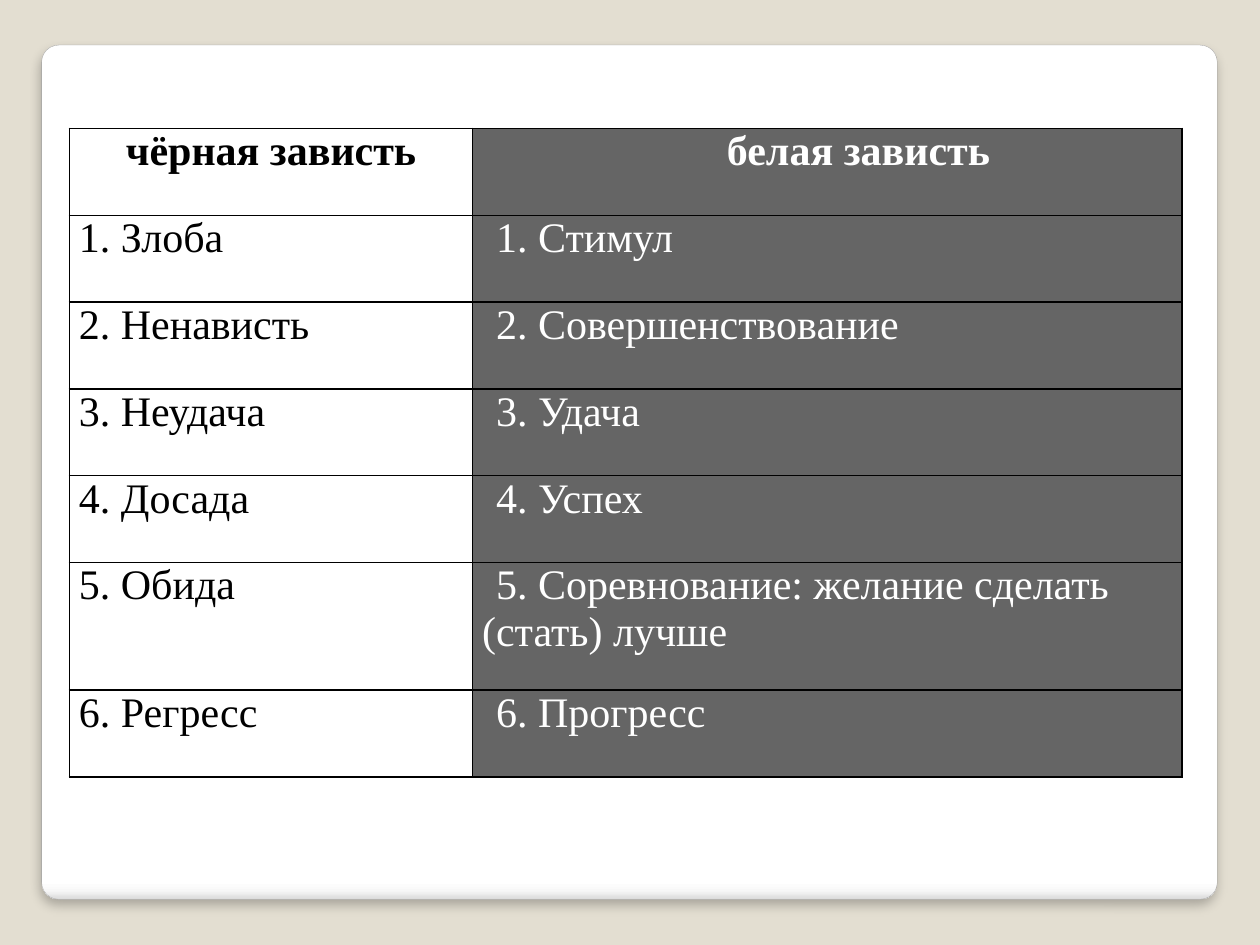
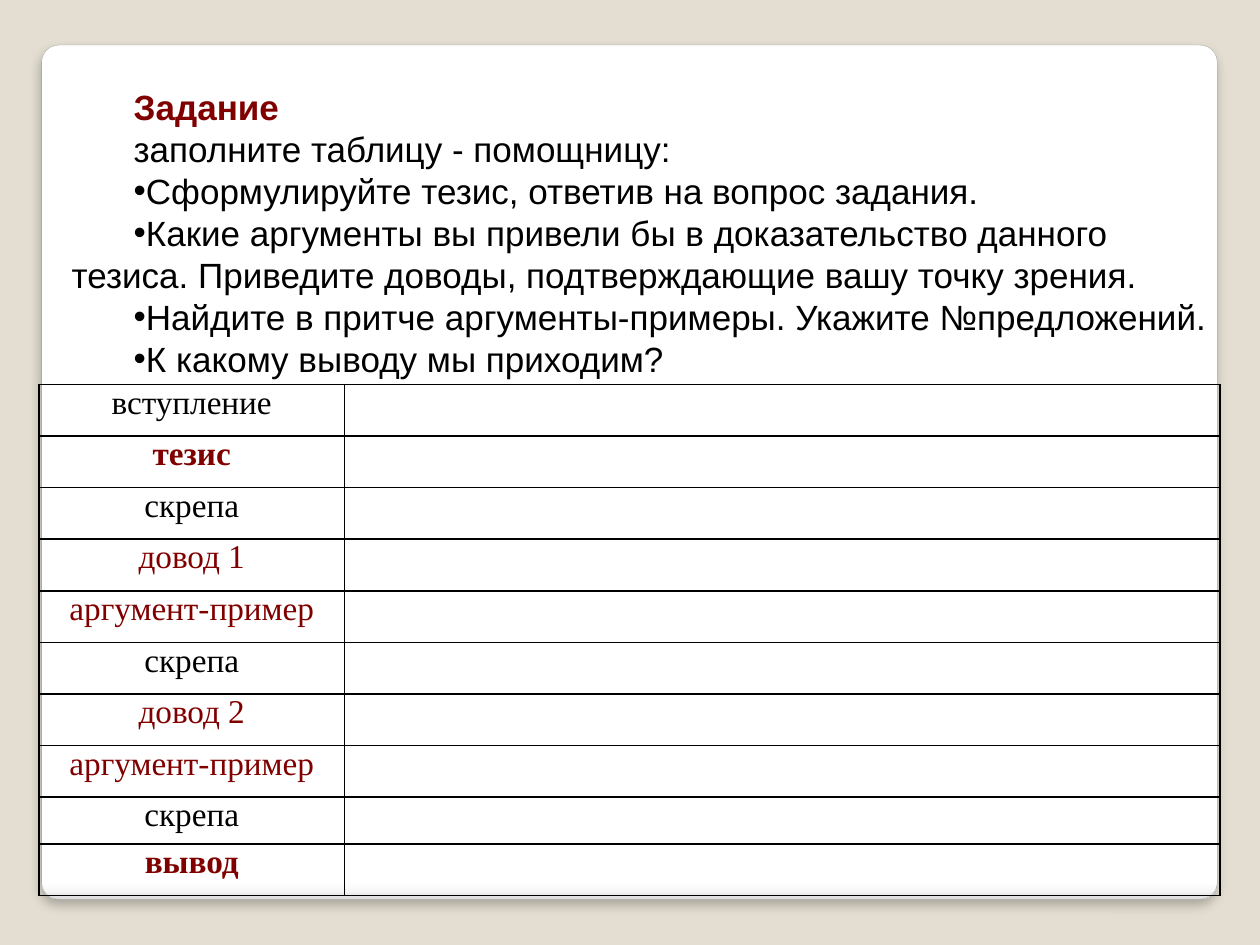
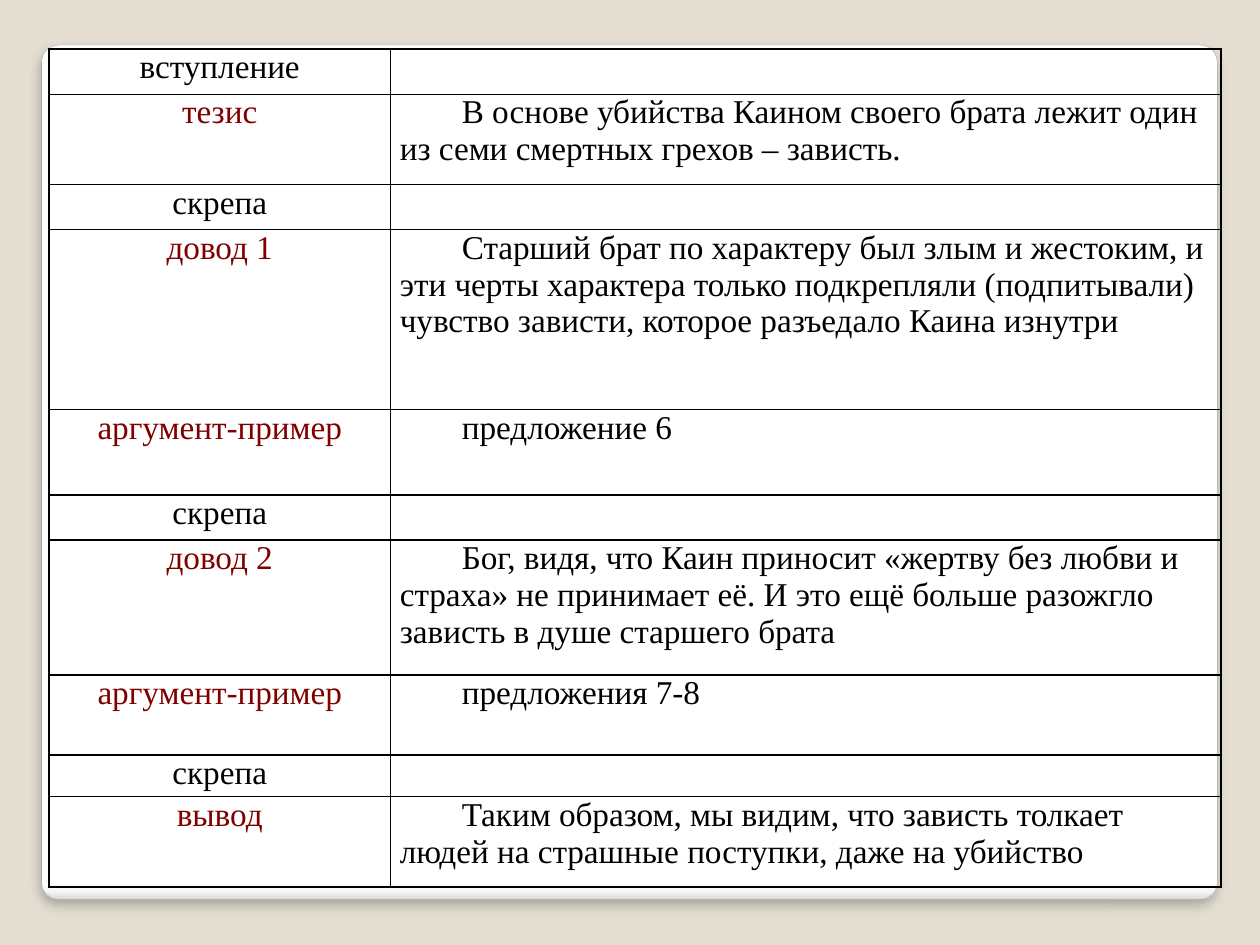
from pptx import Presentation
from pptx.dml.color import RGBColor
from pptx.enum import shapes, text
from pptx.oxml import parse_xml
from pptx.oxml.ns import nsdecls
from pptx.util import Cm, Pt

BEIGE = RGBColor(0xE3, 0xDE, 0xD1)
EDGE = RGBColor(0xA4, 0xA4, 0xA4)
GREY = RGBColor(0x65, 0x65, 0x65)
BLACK = RGBColor(0, 0, 0)
WHITE = RGBColor(0xFF, 0xFF, 0xFF)
MAROON = RGBColor(0x80, 0, 0)
PANEL_STOPS = [(0, "FFFFFF"), (98, "FFFFFF"), (99, "F7F7F7"), (100, "DADADA")]

CENTER = text.PP_ALIGN.CENTER
SERIF = "Times New Roman"
INDENT = 1.25
STAGES = ["вступление", "тезис", "скрепа", "довод 1", "аргумент-пример",
          "скрепа", "довод 2", "аргумент-пример", "скрепа", "вывод"]
PLAIN_STAGES = {"вступление", "скрепа"}


def set_all(obj, values):
    for name, value in values.items():
        setattr(obj, name, value)


def xml(tag, inner="", attrs=""):
    return parse_xml(f"<a:{tag} {nsdecls('a')} {attrs}>{inner}</a:{tag}>")


def solid(color):
    return f'<a:solidFill><a:srgbClr val="{color}"/></a:solidFill>'


class Deck:
    """Holds the shared style and the current slide."""

    def __init__(self):
        self.prs = Presentation()
        set_all(self.prs, {"slide_width": Cm(25.4), "slide_height": Cm(19.05)})
        self.s = None
        fill = self.prs.slide_master.background.fill
        fill.solid()
        fill.fore_color.rgb = BEIGE

    def slide(self, layout=6):
        self.s = self.prs.slides.add_slide(self.prs.slide_layouts[layout])

    def master_panel(self):
        """Draw the rounded panel and move it to the master for every slide."""
        sp = self.s.shapes.add_shape(shapes.MSO_SHAPE.ROUNDED_RECTANGLE,
                                     Cm(0.84), Cm(0.91), Cm(23.7), Cm(17.22))
        sp.adjustments[0] = 0.02
        sp.line.color.rgb = EDGE
        sp.line.width = Pt(0.16)
        stops = "".join(f'<a:gs pos="{pos * 1000}"><a:srgbClr val="{c}"/></a:gs>'
                        for pos, c in PANEL_STOPS)
        grad = xml("gradFill", f'<a:gsLst>{stops}</a:gsLst><a:lin ang="5400000" scaled="0"/>',
                   'rotWithShape="1"')
        spPr = sp._element.spPr
        spPr.insert(2, grad)
        spPr.append(xml("effectLst",
                        f'<a:outerShdw blurRad="{Pt(6)}" dist="{Pt(4)}" dir="5400000" '
                        'algn="t" rotWithShape="0"><a:srgbClr val="000000">'
                        '<a:alpha val="25000"/></a:srgbClr></a:outerShdw>'))
        self.prs.slide_master.shapes._spTree.insert(2, sp._element)

    def paragraph(self, p, words, indent=0, align=None, bullet=None, **font):
        r = p.add_run()
        r.text = words
        color = font.pop("color", BLACK)
        set_all(r.font, font)
        r.font.color.rgb = color
        p.alignment = align
        pPr = p._p.get_or_add_pPr()
        pPr.set("marL", "0")
        pPr.set("indent", str(Cm(indent)))
        pPr.append(xml("buChar", attrs=f'char="{bullet}"') if bullet else xml("buNone"))

    def table(self, left, top, cols, rows, cells):
        """cells holds, row by row, dicts of paragraph values plus an optional fill."""
        tbl = self.s.shapes.add_table(len(rows), len(cols), Cm(left), Cm(top),
                                      Cm(sum(cols)), Cm(sum(rows))).table
        set_all(tbl, {"first_row": False, "horz_banding": False})
        for col, width in zip(tbl.columns, cols):
            col.width = Cm(width)
        for row, height, values in zip(tbl.rows, rows, cells):
            row.height = Cm(height)
            for cell, value in zip(row.cells, values):
                self.cell(cell, **value)

    def cell(self, cell, words="", fill=None, **style):
        set_all(cell, {"margin_left": Cm(0.19), "margin_right": Cm(0.19),
                       "margin_top": 0, "margin_bottom": 0})
        tcPr = cell._tc.get_or_add_tcPr()
        for side in "LRTB":
            tcPr.append(xml(f"ln{side}", solid(BLACK), f'w="{Pt(1)}"'))
        if fill is None:
            cell.fill.background()
        else:
            cell.fill.solid()
            cell.fill.fore_color.rgb = fill
        if words:
            self.paragraph(cell.text_frame.paragraphs[0], words, name=SERIF, **style)

    def stage_table(self, left, top, cols, rows, answers=None, bold=()):
        """Essay plan: stage names on the left, answers on the right."""
        answers = answers or {}
        cells = [[dict(words=stage, align=CENTER, size=Pt(19), bold=stage in bold,
                       color=BLACK if stage in PLAIN_STAGES else MAROON),
                  dict(words=answers.get(i, ""), indent=INDENT, size=Pt(19))]
                 for i, stage in enumerate(STAGES)]
        self.table(left, top, cols, rows, cells)

    def body(self, left, top, width, height, items):
        title, sp = self.s.shapes.title, self.s.placeholders[1]
        title._element.getparent().remove(title._element)
        set_all(sp, {"left": Cm(left), "top": Cm(top),
                     "width": Cm(width), "height": Cm(height)})
        tf = sp.text_frame
        set_all(tf, {"word_wrap": True, "auto_size": text.MSO_AUTO_SIZE.NONE,
                     "vertical_anchor": text.MSO_ANCHOR.MIDDLE})
        for i, item in enumerate(items):
            p = tf.add_paragraph() if i else tf.paragraphs[0]
            set_all(p, {"space_before": Pt(0), "line_spacing": Pt(24)})
            self.paragraph(p, indent=INDENT, name="Arial", size=Pt(20), **item)


def main():
    deck = Deck()

    # Two kinds of envy
    deck.slide()
    deck.master_panel()
    pairs = [("Злоба", "Стимул"), ("Ненависть", "Совершенствование"),
             ("Неудача", "Удача"), ("Досада", "Успех"),
             ("Обида", "Соревнование: желание сделать (стать) лучше"),
             ("Регресс", "Прогресс")]
    black = dict(size=Pt(24))
    white = dict(size=Pt(24), color=WHITE, fill=GREY)
    head = dict(align=CENTER, bold=True)
    cells = [[dict(black, words="чёрная зависть", **head),
              dict(white, words="белая зависть", indent=INDENT, **head)]]
    cells += [[dict(black, words=f"{n}. {bad}"),
               dict(white, words=f"{n}. {good}", indent=0.28)]
              for n, (bad, good) in enumerate(pairs, 1)]
    deck.table(1.4, 2.59, [8.13, 14.3], [1.75] * 5 + [2.57, 1.75], cells)

    # Task and the blank plan
    deck.slide(1)
    bullets = ["Сформулируйте тезис, ответив на вопрос задания.",
               "Какие аргументы вы привели бы в доказательство данного тезиса. "
               "Приведите доводы, подтверждающие вашу точку зрения.",
               "Найдите в притче аргументы-примеры. Укажите №предложений.",
               "К какому выводу мы приходим?"]
    deck.body(1.19, 1.57, 23.42, 6.25,
              [dict(words="Задание", color=MAROON, bold=True),
               dict(words="заполните таблицу - помощницу:")]
              + [dict(words=b, bullet="•") for b in bullets])
    deck.stage_table(0.79, 7.75, [6.15, 17.65], [1.04] * 8 + [0.94, 1.04],
                     bold=("тезис", "вывод"))

    # Completed plan
    deck.slide()
    answers = {
        1: "В основе убийства Каином своего брата лежит один из семи смертных "
           "грехов – зависть.",
        3: "Старший брат по характеру был злым и жестоким, и эти черты характера "
           "только подкрепляли (подпитывали) чувство зависти, которое разъедало "
           "Каина изнутри",
        4: "предложение 6",
        6: "Бог, видя, что Каин приносит «жертву без любви и страха» не принимает "
           "её. И это ещё больше разожгло зависть в душе старшего брата",
        7: "предложения 7-8",
        9: "Таким образом, мы видим, что зависть толкает людей на страшные "
           "поступки, даже на убийство",
    }
    deck.stage_table(0.99, 0.99, [6.88, 16.74],
                     [0.91, 1.82, 0.91, 3.63, 1.72, 0.91, 2.72, 1.61, 0.84, 1.82],
                     answers)

    deck.prs.save("out.pptx")


if __name__ == "__main__":
    main()
